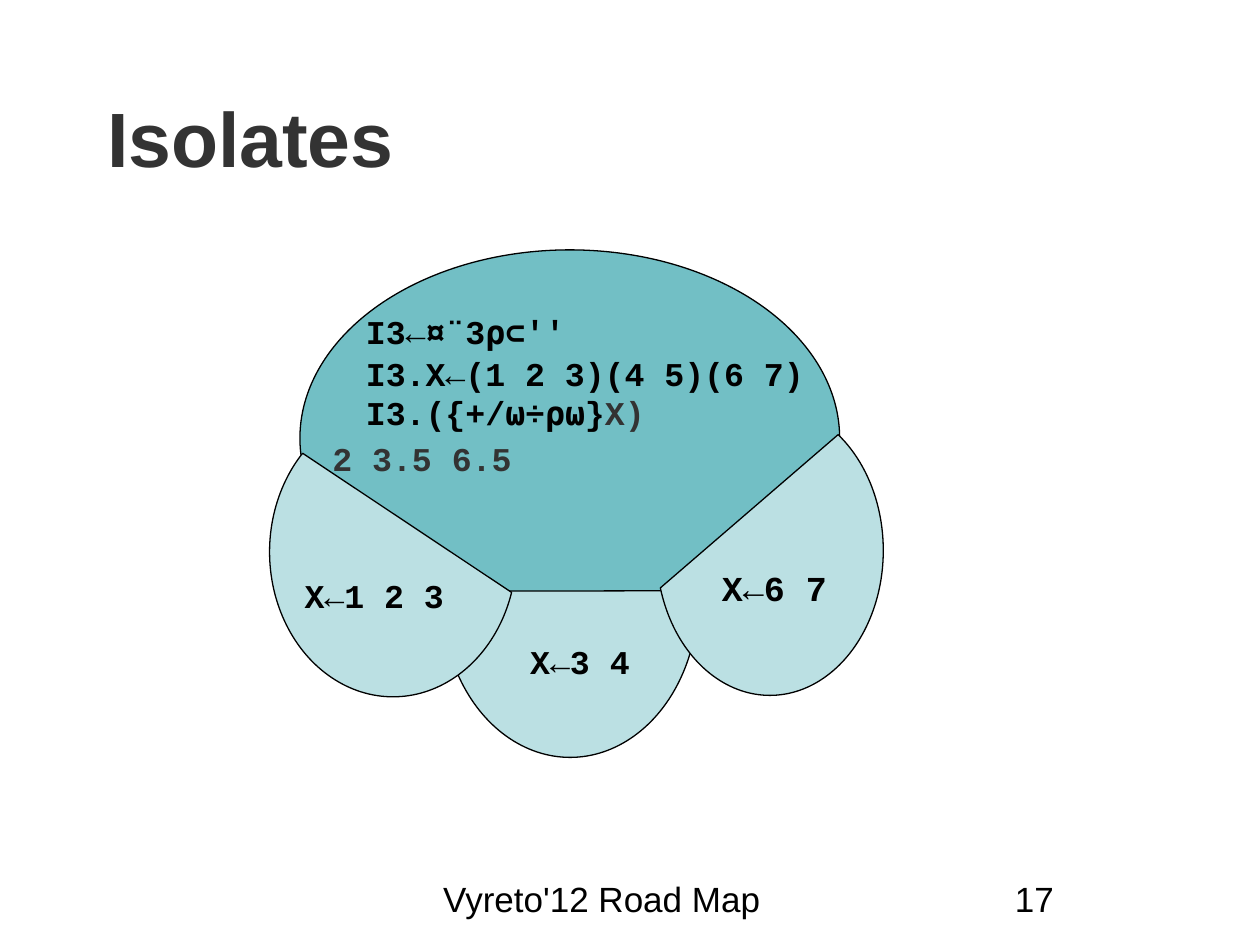
from pptx import Presentation, util as u
from pptx.dml import color
from pptx.enum import shapes, text

HUES = {"ink": "000000", "gray": "333333", "hub": "72BFC5", "leaf": "BBE0E3"}
SANS, CODE = "Arial", "Courier New"


class Deck:
    def __init__(self):
        self.prs = Presentation()
        self.prs.slide_width, self.prs.slide_height = u.Pt(720), u.Pt(540)
        self.slide = self.prs.slides.add_slide(self.prs.slide_layouts[5])

    def hue(self, name):
        return color.RGBColor.from_string(HUES[name])

    def style(self, run, face, size, hue, bold):
        font = run.font
        font.name, font.size, font.bold = face, u.Pt(size), bold
        font.color.rgb = self.hue(hue)

    def title(self, words, x, y, w, h):
        box = self.slide.shapes.title
        box.left, box.top, box.width, box.height = map(u.Pt, (x, y, w, h))
        frame = box.text_frame
        frame.text = words
        frame.auto_size = text.MSO_AUTO_SIZE.NONE
        frame.vertical_anchor = text.MSO_ANCHOR.TOP
        para = frame.paragraphs[0]
        para.alignment = text.PP_ALIGN.LEFT
        self.style(para.runs[0], SANS, 44, "gray", True)

    def shape(self, kind, x, y, w, h, hue):
        item = self.slide.shapes.add_shape(kind, *map(u.Pt, (x, y, w, h)))
        item.shadow.inherit = False
        item.fill.solid()
        item.fill.fore_color.rgb = self.hue(hue)
        item.line.color.rgb = self.hue("ink")
        item.line.width = u.Pt(0.75)
        return item

    def chord(self, x, y, w, h, start, end, flip):
        item = self.shape(shapes.MSO_SHAPE.CHORD, x, y, w, h, "leaf")
        for i, angle in enumerate((start, end)):
            item.adjustments[i] = angle * 0.6
        if flip:
            item.element.spPr.xfrm.set("flipH", "1")

    def label(self, parts, x, y, w, h, face=CODE, size=19, bold=True, align="LEFT"):
        box = self.slide.shapes.add_textbox(*map(u.Pt, (x, y, w, h)))
        frame = box.text_frame
        frame.word_wrap = True
        para = frame.paragraphs[0]
        para.alignment = text.PP_ALIGN[align]
        for words, hue in parts:
            run = para.add_run()
            run.text = words
            self.style(run, face, size, hue, bold)


def main():
    deck = Deck()
    deck.title("Isolates", 54, 48, 612, 90)
    deck.shape(shapes.MSO_SHAPE.OVAL, 171.4, 142.8, 308.4, 215.2, "hub")
    for chord in (
        (252.7, 250.6, 146.2, 182.2, 356.98, 183.24, True),
        (375.2, 231.8, 129.6, 165.6, 18.86, 239.51, True),
        (154.1, 232.6, 141.1, 165.6, 18.86, 227.5, False),
    ):
        deck.chord(*chord)

    for words, x, w, align in (
        ("Vyreto'12 Road Map", 246.2, 228.2, "LEFT"),
        ("17", 516.2, 149.8, "CENTER"),
    ):
        deck.label([(words, "ink")], x, 498, w, 36, SANS, 20, False, align)

    for words, x, y, w, size in (
        ("X←1 2 3", 167, 325.4, 116, 19),
        ("X←3 4", 295.9, 362.9, 93, 19),
        ("X←6 7", 405.4, 320.4, 91, 20),
    ):
        deck.label([(words, "ink")], x, y, w, 30, size=size)

    for parts, x, y in (
        ([("  I3←¤¨3⍴⊂''", "ink")], 179.3, 174.2),
        ([("  I3.X←(1 2 3)(4 5)(6 7)", "ink")], 179.3, 198.2),
        ([("  I3.({+/⍵÷⍴⍵}", "ink"), ("X)", "gray")], 179.3, 220.5),
        ([("2 3.5 6.5", "gray")], 182.9, 247),
    ):
        deck.label(parts, x, y, 331.2, 30)

    deck.prs.save("out.pptx")


if __name__ == "__main__":
    main()
